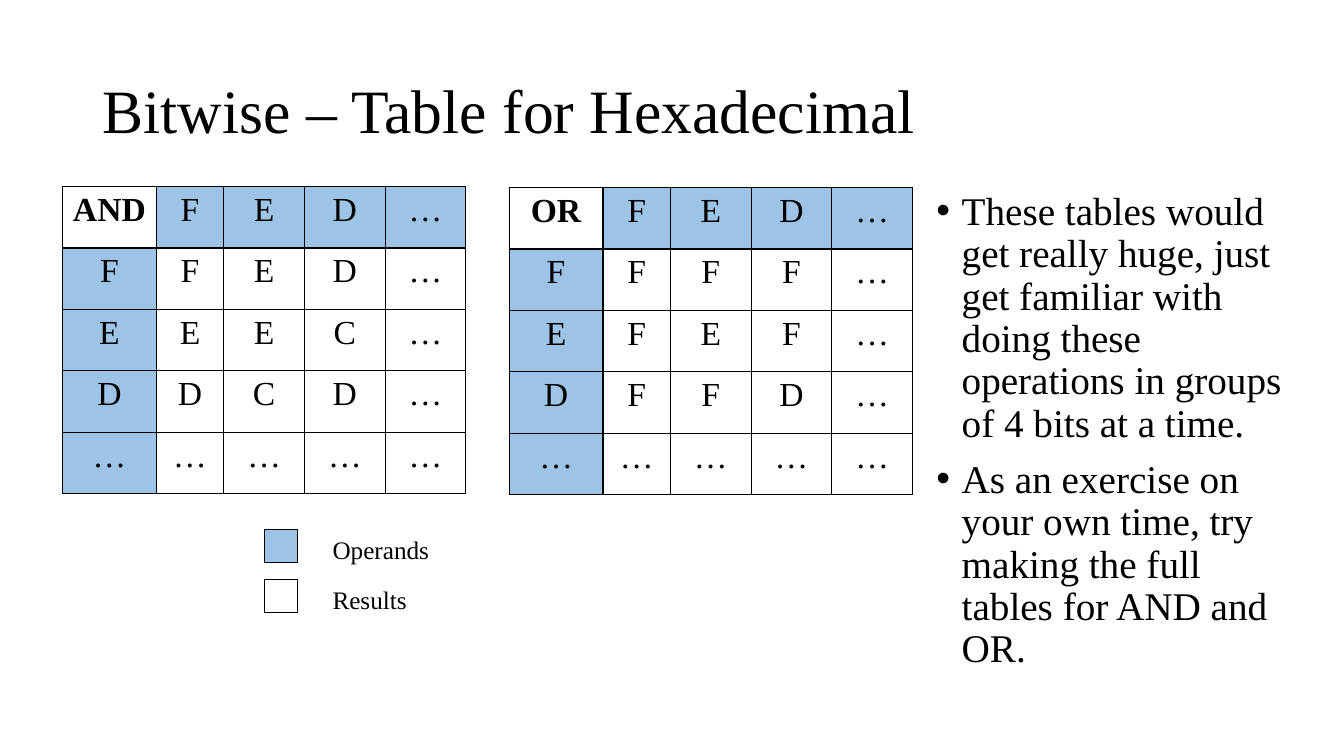
"""Build a slide with hexadecimal AND and OR tables, a legend and notes."""
from lxml import etree
from pptx import Presentation
from pptx.dml.color import RGBColor
from pptx.enum.shapes import MSO_SHAPE
from pptx.enum.text import MSO_ANCHOR, MSO_AUTO_SIZE, PP_ALIGN
from pptx.oxml import parse_xml
from pptx.oxml.ns import qn
from pptx.util import Inches, Pt

TITLE = "Bitwise – Table for Hexadecimal"
TABLES = [
    (5.05, 1.86, ["OR F E D …", "F F F F …", "E F E F …", "D F F D …", "… … … … …"]),
    (0.62, 1.85, ["AND F E D …", "F F E D …", "E E E C …", "D D C D …", "… … … … …"]),
]
BULLETS = [
    "These tables would get really huge, just get familiar with doing these "
    "operations in groups of 4 bits at a time.",
    "As an exercise on your own time, try making the full tables for AND and OR.",
]

BLACK = RGBColor(0x00, 0x00, 0x00)
WHITE = RGBColor(0xFF, 0xFF, 0xFF)
BLUE = RGBColor(0x9D, 0xC3, 0xE6)
LEGEND = [("Operands", BLUE, 1.16), ("Results", WHITE, 0.94)]

FONT = "Times New Roman"
CENTER = PP_ALIGN.CENTER
MIDDLE = MSO_ANCHOR.MIDDLE
GROW = MSO_AUTO_SIZE.SHAPE_TO_FIT_TEXT
RECTANGLE = MSO_SHAPE.RECTANGLE
COLUMN_WIDTHS = [0.93, 0.67, 0.8, 0.8, 0.8]
ROW_HEIGHT = 0.61
LEGEND_TOP, LEGEND_STEP, SWATCH = 5.25, 0.5, 0.33
BORDER = (
    '<a:{} xmlns:a="http://schemas.openxmlformats.org/drawingml/2006/main" w="12700">'
    '<a:solidFill><a:srgbClr val="000000"/></a:solidFill></a:{}>'
)


def set_attributes(target, values):
    for name, value in values.items():
        setattr(target, name, value)


def write(para, text, size, bold=False, **layout):
    set_attributes(para, layout)
    span = para.add_run()
    span.text = text
    set_attributes(span.font, {"name": FONT, "size": Pt(size), "bold": bold})
    span.font.color.rgb = BLACK


def add_box(page, left, top, width, height, **frame_format):
    box = page.shapes.add_textbox(*map(Inches, (left, top, width, height)))
    set_attributes(box.text_frame, frame_format)
    return box.text_frame


def fill_cell(cell, text, is_corner, is_operand):
    properties = cell._tc.get_or_add_tcPr()
    for side in ("lnL", "lnR", "lnT", "lnB"):
        properties.append(parse_xml(BORDER.format(side, side)))
    cell.fill.solid()
    cell.fill.fore_color.rgb = BLUE if is_operand else WHITE
    write(cell.text_frame.paragraphs[0], text, 24, is_corner, alignment=CENTER)


def add_truth_table(page, left, top, lines):
    rows = [line.split() for line in lines]
    size = (sum(COLUMN_WIDTHS), ROW_HEIGHT * len(rows))
    frame = page.shapes.add_table(
        len(rows), len(COLUMN_WIDTHS), *map(Inches, (left, top, *size))
    )
    table = frame.table
    for column, width in zip(table.columns, COLUMN_WIDTHS):
        column.width = Inches(width)
    for i, row in enumerate(rows):
        table.rows[i].height = Inches(ROW_HEIGHT)
        for j, text in enumerate(row):
            is_corner = i == j == 0
            fill_cell(table.cell(i, j), text, is_corner, i * j == 0 and not is_corner)


def add_legend(page):
    for index, (label, color, width) in enumerate(LEGEND):
        top = LEGEND_TOP + index * LEGEND_STEP
        swatch = page.shapes.add_shape(
            RECTANGLE, *map(Inches, (2.62, top, SWATCH, SWATCH))
        )
        swatch.shadow.inherit = False
        swatch.fill.solid()
        swatch.fill.fore_color.rgb = color
        swatch.line.color.rgb = BLACK
        swatch.line.width = Pt(0.75)
        frame = add_box(page, 3.2, top, width, 0.4, word_wrap=False, auto_size=GROW)
        write(frame.paragraphs[0], label, 18)


def add_bullets(page):
    frame = add_box(page, 9.19, 1.85, 3.77, 5.25, word_wrap=True)
    for index, text in enumerate(BULLETS):
        para = frame.add_paragraph() if index else frame.paragraphs[0]
        write(para, text, 28, line_spacing=0.9, space_before=Pt(10))
        properties = para._p.get_or_add_pPr()
        properties.set("marL", str(Inches(0.25)))
        properties.set("indent", str(Inches(-0.25)))
        etree.SubElement(properties, qn("a:buFont"), typeface="Arial")
        etree.SubElement(properties, qn("a:buChar"), char="•")


def main():
    deck = Presentation()
    deck.slide_width, deck.slide_height = Inches(13.33), Inches(7.5)
    page = deck.slides.add_slide(deck.slide_layouts[6])
    title = add_box(page, 0.92, 0.4, 11.5, 1.45, word_wrap=True, vertical_anchor=MIDDLE)
    write(title.paragraphs[0], TITLE, 44, line_spacing=0.9)
    for left, top, lines in TABLES:
        add_truth_table(page, left, top, lines)
    add_legend(page)
    add_bullets(page)
    deck.save("out.pptx")


if __name__ == "__main__":
    main()
